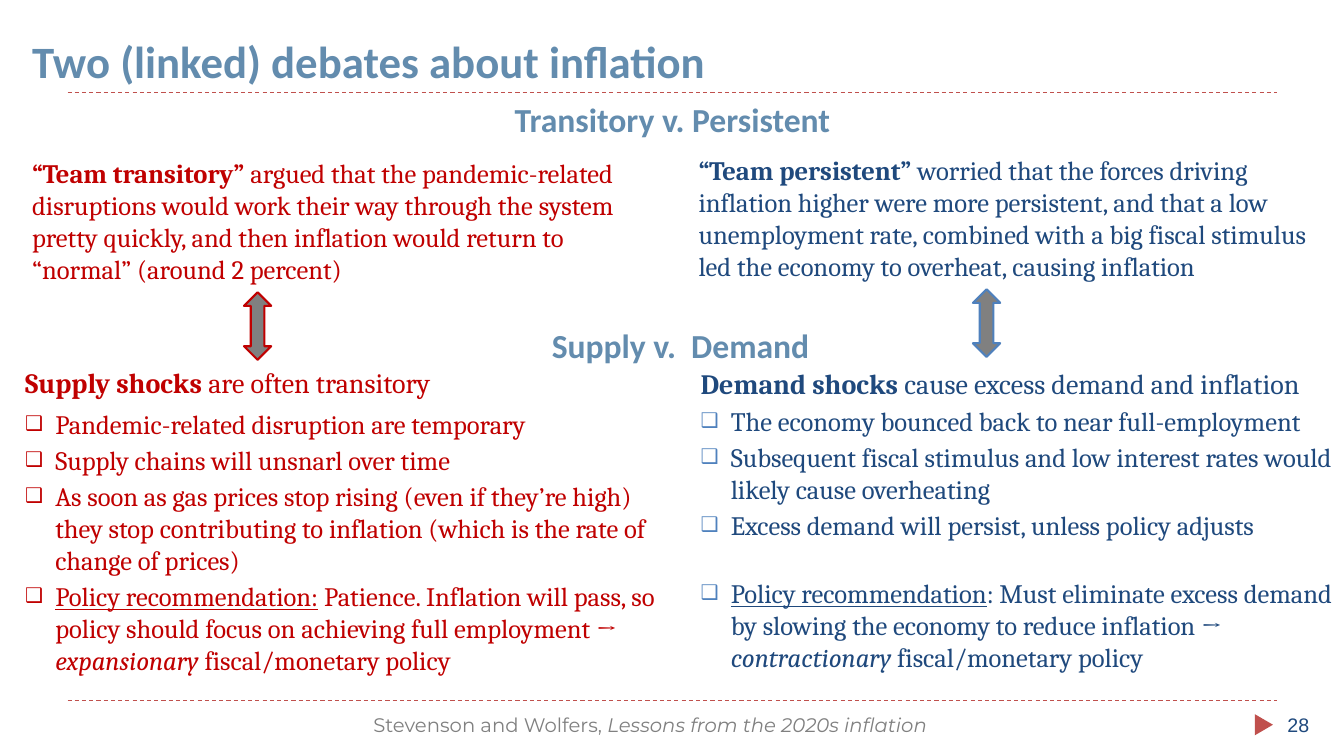
from lxml import etree
from pptx import Presentation
from pptx.dml.color import RGBColor
from pptx.enum.dml import MSO_LINE
from pptx.enum.shapes import MSO_CONNECTOR, MSO_SHAPE
from pptx.enum.text import MSO_ANCHOR, PP_ALIGN
from pptx.oxml.ns import qn
from pptx.util import Inches, Pt

STRAIGHT = MSO_CONNECTOR.STRAIGHT
DASH = MSO_LINE.DASH
TRIANGLE = MSO_SHAPE.ISOSCELES_TRIANGLE
UP_DOWN_ARROW = MSO_SHAPE.UP_DOWN_ARROW
TOP, BOTTOM = MSO_ANCHOR.TOP, MSO_ANCHOR.BOTTOM
LEFT, CENTER = PP_ALIGN.LEFT, PP_ALIGN.CENTER

STEEL = RGBColor(0x63, 0x8C, 0xAE)
RED = RGBColor(0xC0, 0x00, 0x00)
NAVY = RGBColor(0x1F, 0x49, 0x7D)
BLUE = RGBColor(0x4F, 0x81, 0xBD)
BRICK = RGBColor(0xC0, 0x50, 0x4D)
GRAY = RGBColor(0x80, 0x80, 0x80)


def add_rule(s, y):
    line = s.shapes.add_connector(STRAIGHT, Inches(0.67), Inches(y), Inches(12.67), Inches(y))
    line.line.color.rgb = BRICK
    line.line.width = Pt(0.75)
    line.line.dash_style = DASH
    etree.SubElement(line._element.spPr, qn("a:effectLst"))


def add_shape(s, kind, box, fill, outline=None, rotation=0):
    sp = s.shapes.add_shape(kind, *map(Inches, box))
    sp.shadow.inherit = False
    sp.rotation = rotation
    sp.fill.solid()
    sp.fill.fore_color.rgb = fill
    if outline is None:
        sp.line.fill.background()
    else:
        sp.line.color.rgb = outline
        sp.line.width = Pt(1.5)


def add_box(s, box, anchor=TOP):
    tf = s.shapes.add_textbox(*map(Inches, box)).text_frame
    tf.word_wrap = True
    tf.vertical_anchor = anchor
    return tf


def set_bullet(p, color):
    pPr = p._p.get_or_add_pPr()
    pPr.set("marL", str(Inches(0.3)))
    pPr.set("indent", str(-Inches(0.3)))
    bu_color = etree.SubElement(pPr, qn("a:buClr"))
    etree.SubElement(bu_color, qn("a:srgbClr"), val=str(color))
    etree.SubElement(pPr, qn("a:buSzPct"), val="76000")
    etree.SubElement(pPr, qn("a:buFont"), typeface="Arial")
    etree.SubElement(pPr, qn("a:buChar"), char="❑")


def add_text(tf, *runs, size, font, color, align=LEFT, before=0, bullet=None):
    p = tf.paragraphs[0]
    if p.runs:
        p = tf.add_paragraph()
    p.alignment = align
    p.space_before = Pt(before)
    if bullet is not None:
        set_bullet(p, bullet)
    for text, style in runs:
        r = p.add_run()
        r.text = text
        r.font.size = Pt(size)
        r.font.name = font
        r.font.color.rgb = color
        r.font.bold = style == "bold"
        r.font.italic = style == "italic"
        r.font.underline = style == "underline"


def add_heading(s, box, text, size=24, align=CENTER, anchor=TOP):
    add_text(add_box(s, box, anchor), (text, "bold"),
             size=size, font="Calibri", color=STEEL, align=align)


def add_team(s, box, name, view, color):
    add_text(add_box(s, box), (name, "bold"), (view, ""), size=19, font="Cambria", color=color)


def add_shocks(s, box, lead, points, color, bullet, gaps):
    tf = add_box(s, box)
    add_text(tf, *lead, size=20, font="Cambria", color=color)
    for runs, gap in zip(points, gaps):
        add_text(tf, *runs, size=19, font="Cambria", color=color, before=gap, bullet=bullet)


def main():
    prs = Presentation()
    prs.slide_width, prs.slide_height = Inches(13.33), Inches(7.5)
    s = prs.slides.add_slide(prs.slide_layouts[6])

    for y in (6.95, 0.92):
        add_rule(s, y)
    add_shape(s, TRIANGLE, (12.43, 7.1, 0.21, 0.18), BRICK, rotation=90)

    add_heading(s, (0.22, 0.17, 12.89, 0.75), "Two (linked) debates about inflation",
                size=32, align=LEFT, anchor=BOTTOM)
    add_heading(s, (3.28, 0.93, 6.78, 0.5), "Transitory v. Persistent")
    add_heading(s, (3.36, 3.17, 6.78, 0.5), "Supply v.  Demand")

    add_team(s, (0.22, 1.51, 6.28, 1.35), "“Team transitory” ",
             "argued that the pandemic-related disruptions would work their way through "
             "the system pretty quickly, and then inflation would return to “normal” "
             "(around 2 percent)", RED)
    add_team(s, (6.83, 1.48, 6.4, 1.35), "“Team persistent” ",
             "worried that the forces driving inflation higher were more persistent, and "
             "that a low unemployment rate, combined with a big fiscal stimulus led the "
             "economy to overheat, causing inflation", NAVY)

    add_shocks(s, (0.15, 3.58, 6.48, 3.15),
               [("Supply shocks ", "bold"), ("are often transitory", "")],
               [[("Pandemic-related disruption are temporary", "")],
                [("Supply chains will unsnarl over time", "")],
                [("As soon as gas prices stop rising (even if they’re high) they stop "
                  "contributing to inflation (which is the rate of change of prices)", "")],
                [("Policy recommendation:", "underline"),
                 (" Patience. Inflation will pass, so policy should focus on achieving "
                  "full employment → ", ""),
                 ("expansionary", "italic"), (" fiscal/monetary policy", "")]],
               RED, RED, gaps=(6, 3, 3, 3))
    add_shocks(s, (6.85, 3.59, 6.57, 3.15),
               [("Demand shocks ", "bold"), ("cause excess demand and inflation", "")],
               [[("The economy bounced back to near full-employment", "")],
                [("Subsequent fiscal stimulus and low interest rates would likely cause "
                  "overheating", "")],
                [("Excess demand will persist, unless policy adjusts", "")],
                [("Policy recommendation", "underline"),
                 (": Must eliminate excess demand by slowing the economy to reduce "
                  "inflation → ", ""),
                 ("contractionary", "italic"), (" fiscal/monetary policy", "")]],
               NAVY, BLUE, gaps=(3, 3, 3, 26))

    add_shape(s, UP_DOWN_ARROW, (2.42, 2.9, 0.27, 0.67), GRAY, outline=RED)
    add_shape(s, UP_DOWN_ARROW, (9.65, 2.87, 0.27, 0.67), GRAY, outline=BLUE)

    add_text(add_box(s, (0.67, 7.02, 11.56, 0.4)),
             ("Stevenson and Wolfers, ", ""), ("Lessons from the 2020s inflation", "italic"),
             size=14, font="Montserrat", color=GRAY, align=CENTER)
    add_text(add_box(s, (12.67, 7.02, 0.66, 0.4)), ("28", ""),
             size=14, font="Arial", color=NAVY)

    prs.save("out.pptx")


if __name__ == "__main__":
    main()
